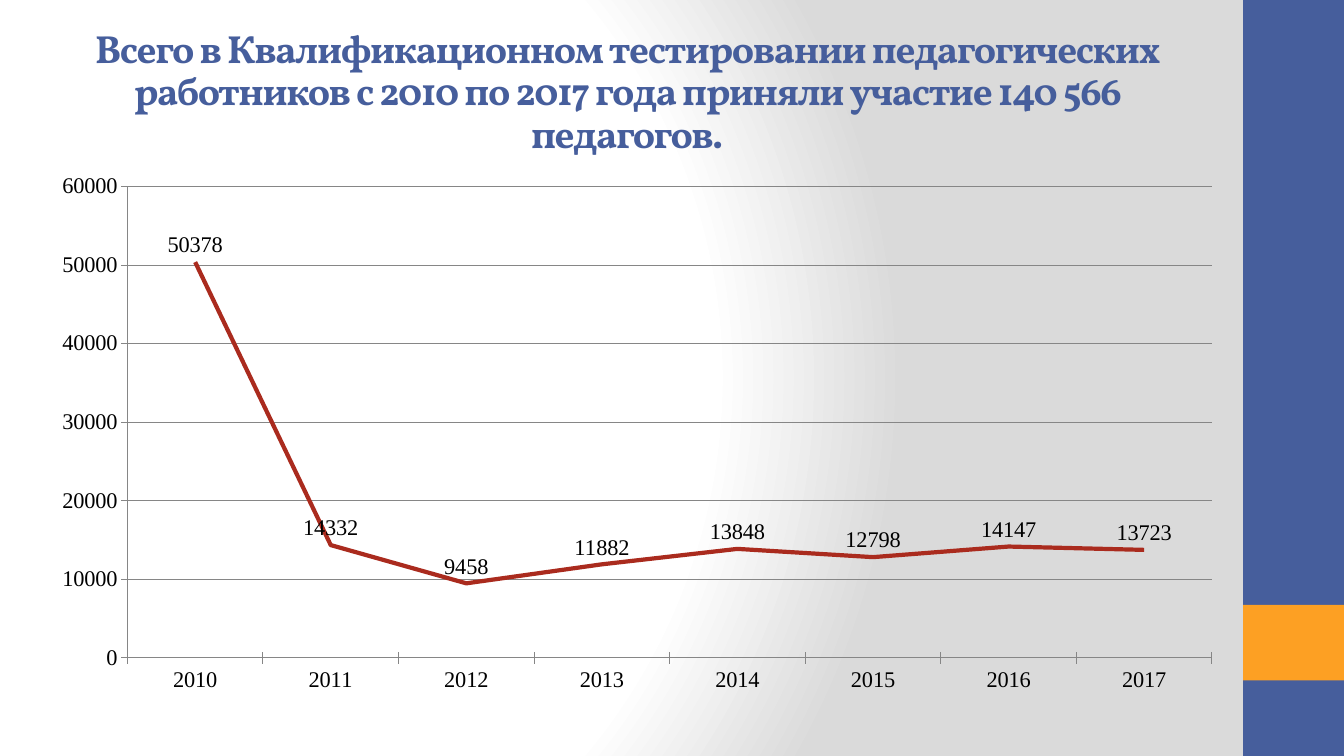
import pptx
import pptx.util
import pptx.oxml
import pptx.chart.data
import pptx.dml.color
import pptx.enum.chart
import pptx.enum.shapes
import pptx.enum.text

Pt = pptx.util.Pt
BLUE = pptx.dml.color.RGBColor(0x46, 0x5E, 0x9C)
ORANGE = pptx.dml.color.RGBColor(0xFD, 0xA0, 0x23)
RED = pptx.dml.color.RGBColor(0xAA, 0x2B, 0x1E)
GRAY = pptx.dml.color.RGBColor(0x86, 0x86, 0x86)
BLACK = pptx.dml.color.RGBColor(0, 0, 0)

BACKGROUND_GRADIENT = """
<a:gradFill xmlns:a="http://schemas.openxmlformats.org/drawingml/2006/main" rotWithShape="1">
  <a:gsLst>
    <a:gs pos="0"><a:srgbClr val="FFFFFF"/></a:gs>
    <a:gs pos="75000"><a:srgbClr val="FFFFFF"/></a:gs>
    <a:gs pos="100000"><a:srgbClr val="DADADA"/></a:gs>
  </a:gsLst>
  <a:path path="circle"><a:fillToRect l="20000" t="50000" r="100000" b="50000"/></a:path>
</a:gradFill>
"""

presentation = pptx.Presentation()
presentation.slide_width = Pt(960)
presentation.slide_height = Pt(540)
slide = presentation.slides.add_slide(presentation.slide_layouts[6])

slide.background.fill.solid()
solid_fill = slide.element.xpath("p:cSld/p:bg/p:bgPr/a:solidFill")[0]
solid_fill.getparent().replace(solid_fill, pptx.oxml.parse_xml(BACKGROUND_GRADIENT))

for top, height, color in ((0, 540, BLUE), (432, 54, ORANGE)):
    band = slide.shapes.add_shape(
        pptx.enum.shapes.MSO_SHAPE.RECTANGLE, Pt(888), Pt(top), Pt(72), Pt(height))
    band.shadow.inherit = False
    band.fill.solid()
    band.fill.fore_color.rgb = color
    band.line.fill.background()

title = slide.shapes.add_textbox(Pt(48), Pt(21.6), Pt(800), Pt(90))
title.text_frame.word_wrap = True
title.text_frame.vertical_anchor = pptx.enum.text.MSO_ANCHOR.MIDDLE
title.text_frame.text = (
    "Всего в Квалификационном тестировании педагогических работников "
    "с 2010 по 2017 года приняли участие 140 566 педагогов.")
paragraph = title.text_frame.paragraphs[0]
paragraph.alignment = pptx.enum.text.PP_ALIGN.CENTER
paragraph.line_spacing = 0.9
run = paragraph.runs[0]
run.font.name = "Vollkorn"
run.font.size = Pt(28)
run.font.bold = True
run.font.color.rgb = BLUE
run.font._element.set("spc", "-100")

chart_data = pptx.chart.data.CategoryChartData()
chart_data.categories = [str(year) for year in range(2010, 2018)]
chart_data.add_series(
    "Series 1", (50378, 14332, 9458, 11882, 13848, 12798, 14147, 13723))
chart = slide.shapes.add_chart(
    pptx.enum.chart.XL_CHART_TYPE.LINE_STACKED,
    Pt(27.4), Pt(116.6), Pt(855.4), Pt(386), chart_data).chart
chart.has_legend = False
chart.has_title = False
chart.font.name = "Times New Roman"
chart.font.size = Pt(16)
chart.font.color.rgb = BLACK

for axis in (chart.category_axis, chart.value_axis):
    axis.major_tick_mark = pptx.enum.chart.XL_TICK_MARK.CROSS
    axis.format.line.color.rgb = GRAY
    axis.format.line.width = Pt(0.75)
chart.value_axis.minimum_scale = 0
chart.value_axis.maximum_scale = 60000
chart.value_axis.major_unit = 10000
chart.value_axis.has_major_gridlines = True
chart.value_axis.major_gridlines.format.line.color.rgb = GRAY
chart.value_axis.major_gridlines.format.line.width = Pt(0.75)

plot = chart.plots[0]
plot.vary_by_categories = False
participants = plot.series[0]
participants.smooth = False
participants.marker.style = pptx.enum.chart.XL_MARKER_STYLE.NONE
participants.format.line.color.rgb = RED
participants.format.line.width = Pt(3)
participants.data_labels.show_value = True
participants.data_labels.position = pptx.enum.chart.XL_LABEL_POSITION.ABOVE

presentation.save("out.pptx")
